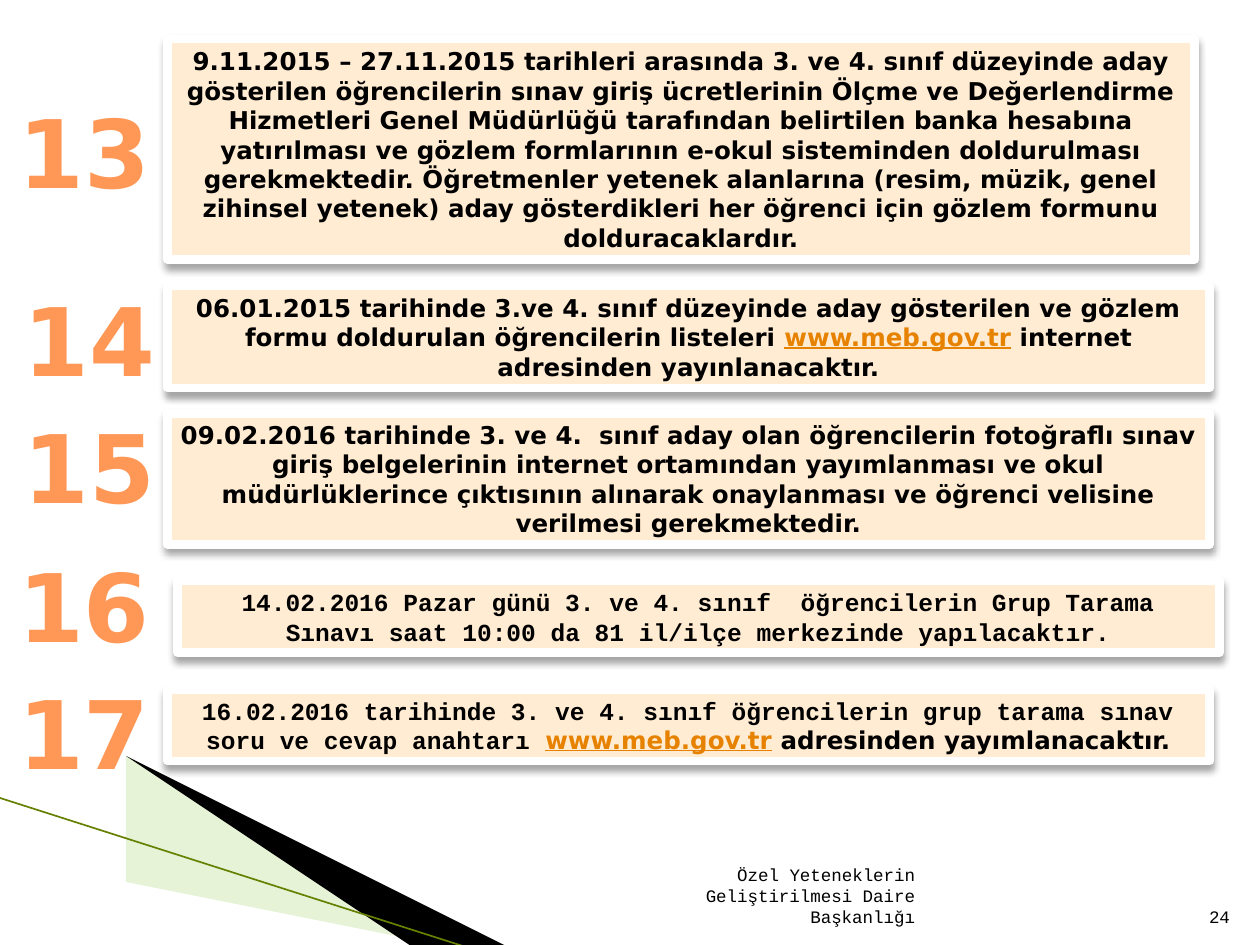
from lxml.etree import SubElement
from pptx import Presentation
from pptx.dml.color import RGBColor
from pptx.enum.shapes import MSO_CONNECTOR, MSO_SHAPE
from pptx.enum.text import MSO_ANCHOR, PP_ALIGN
from pptx.oxml.ns import qn
from pptx.util import Inches, Pt

MONO, SANS = "Courier New", "DejaVu Sans"
BLACK, LINK = "000000", "E68200"

deck = Presentation()
deck.slide_width, deck.slide_height = Inches(10), Inches(7.5)
COL = deck.slide_width / 10
ROW = deck.slide_height / 7.5
slide = deck.slides.add_slide(deck.slide_layouts[6])
shapes = slide.shapes


def cells(left, top, width, height):
    """Turn columns and rows of the grid into slide lengths."""
    return int(left * COL), int(top * ROW), int(width * COL), int(height * ROW)


def write(shape, runs, size, align, anchor, bold=True):
    """Fill a shape with one paragraph of (text, font, colour) runs."""
    frame = shape.text_frame
    frame.word_wrap = True
    frame.vertical_anchor = anchor
    paragraph = frame.paragraphs[0]
    paragraph.alignment = align
    for text, font, colour in runs:
        run = paragraph.add_run()
        run.text = text
        run.font.name = font
        run.font.size = Pt(size)
        run.font.bold = bold
        run.font.underline = colour == LINK
        run.font.color.rgb = RGBColor.from_string(colour)


# Corner decoration
wedges = [
    ("C3E19D", 40, [(0.55, 6.51), (5.95, 7.51), (4.56, 7.51), (0.55, 6.5)]),
    (BLACK, 100, [(0.53, 6.49), (4.57, 7.51), (3.72, 7.52), (0.54, 6.5)]),
]
for colour, opacity, points in wedges:
    builder = shapes.build_freeform(*points[0], scale=COL)
    builder.add_line_segments(points[1:])
    wedge = builder.convert_to_shape()
    wedge.shadow.inherit = False
    wedge.fill.solid()
    wedge.fill.fore_color.rgb = RGBColor.from_string(colour)
    wedge.line.fill.background()
    tint = wedge._element.spPr.find(qn("a:solidFill"))[0]
    SubElement(tint, qn("a:alpha"), val=str(opacity * 1000))

start_x, start_y, end_x, end_y = cells(-0.01, 6.33, 3.71, 7.52)
edge = shapes.add_connector(MSO_CONNECTOR.STRAIGHT, start_x, start_y, end_x, end_y)
edge.line.color.rgb = RGBColor.from_string("668000")
edge.line.width = Pt(0.95)
SubElement(edge._element.spPr, qn("a:effectLst"))

# Footer and page number
for text, left, width in [
    ("Özel Yeteneklerin Geliştirilmesi Daire Başkanlığı", 4.79, 2.57),
    ("24", 9.46, 0.4),
]:
    footer = shapes.add_textbox(*cells(left, 7.01, width, 0.4))
    write(footer, [(text, MONO, BLACK)], 10, PP_ALIGN.RIGHT, MSO_ANCHOR.BOTTOM, bold=False)

# Steps: number, its left, top and width, then the box and its runs
steps = [
    ("13", (0, 0.7, 1.34), (1.33, 0.31, 8.15, 1.75), [
        ("9.11.2015 – 27.11.2015 tarihleri arasında 3. ve 4. sınıf düzeyinde aday "
         "gösterilen öğrencilerin sınav giriş ücretlerinin Ölçme ve Değerlendirme "
         "Hizmetleri Genel Müdürlüğü tarafından belirtilen banka hesabına "
         "yatırılması ve gözlem formlarının e-okul sisteminden doldurulması "
         "gerekmektedir. Öğretmenler yetenek alanlarına (resim, müzik, genel "
         "zihinsel yetenek) aday gösterdikleri her öğrenci için gözlem formunu "
         "dolduracaklardır.", SANS, BLACK)]),
    ("14", (0, 2.19, 1.42), (1.33, 2.27, 8.27, 0.81), [
        ("06.01.2015 tarihinde 3.ve 4. sınıf düzeyinde aday gösterilen ve gözlem "
         "formu doldurulan öğrencilerin listeleri ", SANS, BLACK),
        ("www.meb.gov.tr", SANS, LINK),
        (" internet adresinden yayınlanacaktır.", SANS, BLACK)]),
    ("15", (0, 3.2, 1.42), (1.33, 3.28, 8.27, 1.04), [
        ("09.02.2016 tarihinde 3. ve 4.  sınıf aday olan öğrencilerin fotoğraflı sınav "
         "giriş belgelerinin internet ortamından yayımlanması ve okul "
         "müdürlüklerince çıktısının alınarak onaylanması ve öğrenci velisine "
         "verilmesi gerekmektedir.", SANS, BLACK)]),
    ("16", (-0.16, 4.3, 1.65), (1.41, 4.61, 8.27, 0.57), [
        ("14.02.2016 Pazar günü 3. ve 4. sınıf  öğrencilerin Grup Tarama "
         "Sınavı saat 10:00 da 81 il/ilçe merkezinde yapılacaktır.", MONO, BLACK)]),
    ("17", (-0.16, 5.31, 1.65), (1.33, 5.47, 8.27, 0.57), [
        ("16.02.2016 tarihinde 3. ve 4. sınıf öğrencilerin grup tarama sınav "
         "soru ve cevap anahtarı ", MONO, BLACK),
        ("www.meb.gov.tr", SANS, LINK),
        (" adresinden yayımlanacaktır.", SANS, BLACK)]),
]
for number, number_place, box_place, runs in steps:
    box = shapes.add_shape(MSO_SHAPE.RECTANGLE, *cells(*box_place))
    box.fill.solid()
    box.fill.fore_color.rgb = RGBColor.from_string("FFECD3")
    box.line.color.rgb = RGBColor.from_string("FFFFFF")
    box.line.width = Pt(5)
    box.shadow.inherit = False
    effects = box._element.spPr.find(qn("a:effectLst"))
    shadow = SubElement(effects, qn("a:outerShdw"), blurRad=str(Pt(4)),
                        dist=str(Pt(3)), dir="5400000", rotWithShape="0")
    shade = SubElement(shadow, qn("a:srgbClr"), val=BLACK)
    SubElement(shade, qn("a:alpha"), val="35000")
    write(box, runs, 14, PP_ALIGN.CENTER, MSO_ANCHOR.MIDDLE)

    label = shapes.add_textbox(*cells(*number_place, 1.01))
    write(label, [(number, SANS, "FF9856")], 54, PP_ALIGN.CENTER, MSO_ANCHOR.TOP)

deck.save("out.pptx")
